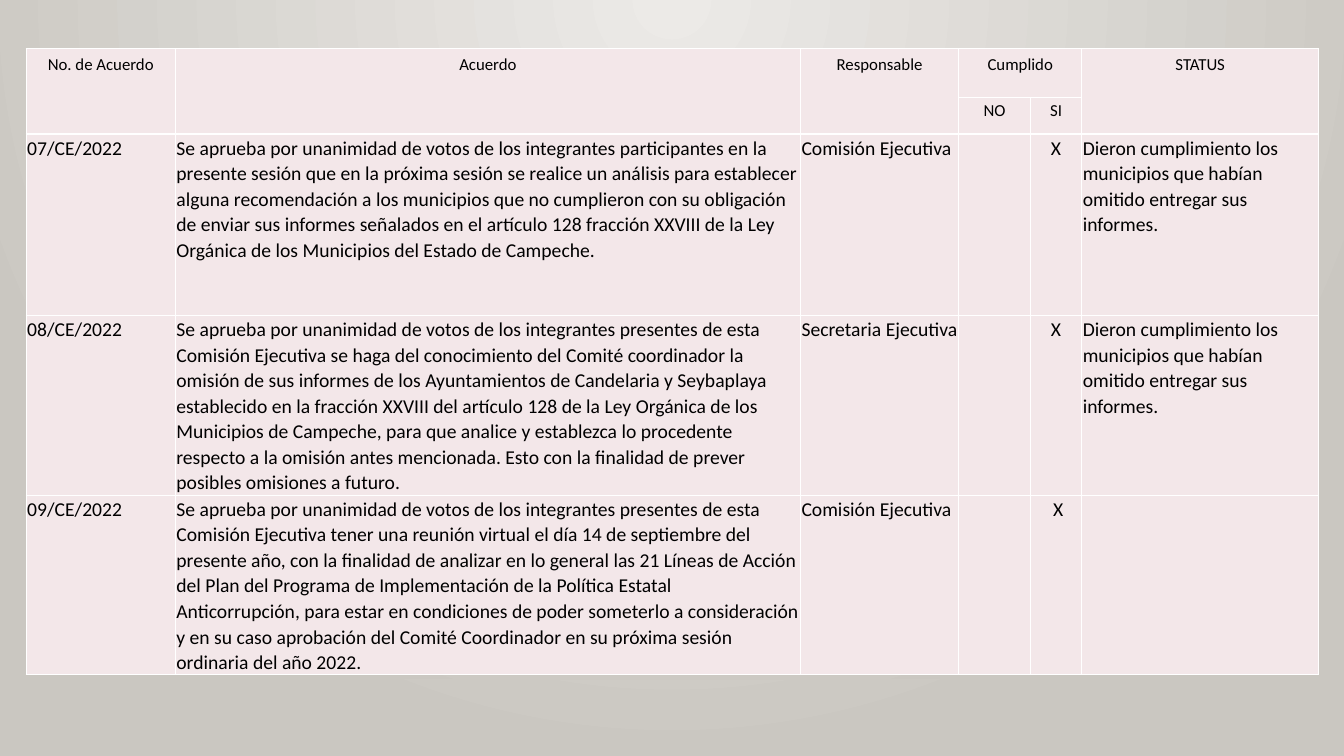
import dataclasses

import lxml.etree
import pptx
import pptx.dml.color
import pptx.enum.shapes
import pptx.enum.text
import pptx.oxml.ns
import pptx.util

Inches = pptx.util.Inches
Pt = pptx.util.Pt
RGB = pptx.dml.color.RGBColor.from_string
qn = pptx.oxml.ns.qn
CENTER = pptx.enum.text.PP_ALIGN.CENTER
LEFT = pptx.enum.text.PP_ALIGN.LEFT


@dataclasses.dataclass(frozen=True)
class Theme:
    font: str = "Calibri"
    header_size: int = 12
    body_size: int = 14
    text: str = "000000"
    cell: str = "F3E7E9"
    border: str = "FFFFFF"
    glow: str = "ECEAE7"
    edge: str = "CAC7C1"


THEME = Theme()

COLUMN_WIDTHS = [1.48, 6.2, 1.57, 0.71, 0.51, 2.35]
ROW_HEIGHTS = [0.49, 0.36, 1.8, 1.78, 1.78]
MARK_COLUMNS = (3, 4)
# First cell and last cell of each merged header, as (row, column)
MERGES = [((0, column), (1, column)) for column in (0, 1, 2, 5)] + [((0, 3), (0, 4))]

ROWS = [
    ["No. de Acuerdo", "Acuerdo", "Responsable", "Cumplido", "", "STATUS"],
    ["", "", "", "NO", "SI", ""],
    ["07/CE/2022",
     "Se aprueba por unanimidad de votos de los integrantes participantes en la presente "
     "sesión que en la próxima sesión se realice un análisis para establecer alguna "
     "recomendación a los municipios que no cumplieron con su obligación de enviar sus "
     "informes señalados en el artículo 128 fracción XXVIII de la Ley Orgánica de los "
     "Municipios del Estado de Campeche.",
     "Comisión Ejecutiva", "", "X",
     "Dieron cumplimiento los municipios que habían omitido entregar sus informes."],
    ["08/CE/2022",
     "Se aprueba por unanimidad de votos de los integrantes presentes de esta Comisión "
     "Ejecutiva se haga del conocimiento del Comité coordinador la omisión de sus informes "
     "de los Ayuntamientos de Candelaria y Seybaplaya establecido en la fracción XXVIII del "
     "artículo 128 de la Ley Orgánica de los Municipios de Campeche, para que analice y "
     "establezca lo procedente respecto a la omisión antes mencionada. Esto con la finalidad "
     "de prever posibles omisiones a futuro.",
     "Secretaria Ejecutiva", "", "X",
     "Dieron cumplimiento los municipios que habían omitido entregar sus informes."],
    ["09/CE/2022",
     "Se aprueba por unanimidad de votos de los integrantes presentes de esta Comisión "
     "Ejecutiva tener una reunión virtual el día 14 de septiembre del presente año, con la "
     "finalidad de analizar en lo general las 21 Líneas de Acción del Plan del Programa de "
     "Implementación de la Política Estatal Anticorrupción, para estar en condiciones de "
     "poder someterlo a consideración y en su caso aprobación del Comité Coordinador en su "
     "próxima sesión ordinaria del año 2022.",
     "Comisión Ejecutiva", "", " X", ""],
]


def apply_glow(fill, element):
    """Fill with a radial gradient centred on the top edge."""
    fill.gradient()
    for stop, color in zip(fill.gradient_stops, (THEME.glow, THEME.edge)):
        stop.color.rgb = RGB(color)
    gradient = element.find(".//" + qn("a:gradFill"))
    gradient.remove(gradient.find(qn("a:lin")))
    circle = lxml.etree.SubElement(gradient, qn("a:path"), path="circle")
    lxml.etree.SubElement(circle, qn("a:fillToRect"),
                          l="43000", t="0", r="43000", b="100000")


def add_backdrop(page, left, top, width, height):
    apply_glow(page.background.fill, page._element)
    panel = page.shapes.add_shape(pptx.enum.shapes.MSO_SHAPE.RECTANGLE,
                                  Inches(left), Inches(top), Inches(width), Inches(height))
    panel.shadow.inherit = False
    panel.line.fill.background()
    apply_glow(panel.fill, panel._element)


def add_borders(cell):
    properties = cell._tc.get_or_add_tcPr()
    for position, side in enumerate(("lnL", "lnR", "lnT", "lnB")):
        line = lxml.etree.Element(qn("a:" + side), w=str(Pt(1)))
        solid = lxml.etree.SubElement(line, qn("a:solidFill"))
        lxml.etree.SubElement(solid, qn("a:srgbClr"), val=THEME.border)
        properties.insert(position, line)


def fill_cell(cell, text, size, align, margins):
    cell.fill.solid()
    cell.fill.fore_color.rgb = RGB(THEME.cell)
    add_borders(cell)
    cell.margin_left, cell.margin_top, cell.margin_right, cell.margin_bottom = map(Inches, margins)
    cell.text = text
    para = cell.text_frame.paragraphs[0]
    para.alignment = align
    para.line_spacing = 1.07
    para.space_after = Pt(8)
    para.font.name = THEME.font
    para.font.size = Pt(size)
    para.font.color.rgb = RGB(THEME.text)


def add_agreements(page, left, top, width, height):
    frame = page.shapes.add_table(len(ROWS), len(COLUMN_WIDTHS),
                                  Inches(left), Inches(top), Inches(width), Inches(height))
    table = frame.table
    table.first_row = table.horz_banding = False

    # Column and row sizes
    for column, size in zip(table.columns, COLUMN_WIDTHS):
        column.width = Inches(size)
    for row, size in zip(table.rows, ROW_HEIGHTS):
        row.height = Inches(size)

    # Cell contents
    for row, texts in enumerate(ROWS):
        header = row < 2
        size = THEME.header_size if header else THEME.body_size
        margins = (0.11, 0.05, 0.11, 0.05) if row == 0 else (0.01, 0.01, 0.01, 0)
        for column, text in enumerate(texts):
            align = CENTER if header or column in MARK_COLUMNS else LEFT
            fill_cell(table.cell(row, column), text, size, align, margins)

    # Merged headers
    for first, last in MERGES:
        table.cell(*first).merge(table.cell(*last))


def main():
    deck = pptx.Presentation()
    deck.slide_width = Inches(13.33)
    deck.slide_height = Inches(7.5)
    page = deck.slides.add_slide(deck.slide_layouts[6])
    add_backdrop(page, 0, 0, 13.33, 6.74)
    add_agreements(page, 0.26, 0.48, sum(COLUMN_WIDTHS), sum(ROW_HEIGHTS))
    deck.save("out.pptx")


if __name__ == "__main__":
    main()
